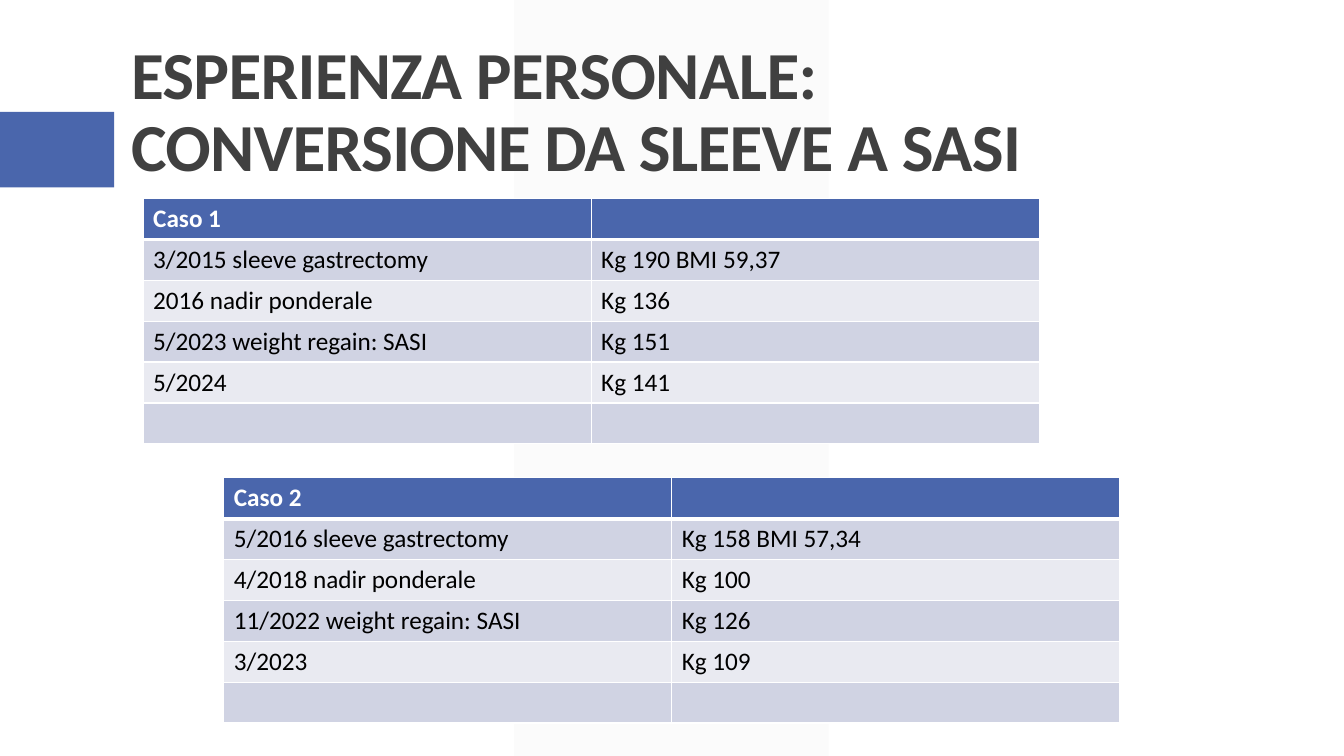
"""Builds the slide on sleeve-to-SASI conversion with its two case tables."""
from dataclasses import dataclass

from lxml import etree
from pptx import Presentation
from pptx import util as u
from pptx.dml.color import RGBColor
from pptx.enum import shapes, text
from pptx.oxml import ns

SLIDE_WIDTH, SLIDE_HEIGHT = u.Inches(13.333), u.Inches(7.5)
GRID = 100
FONT = "Calibri"
BLUE, WHITE, BLACK, GREY = "4A66AC", "FFFFFF", "000000", "404040"
BANDS = ("D0D3E3", "E9EAF1")


@dataclass(frozen=True)
class Area:
    """A rectangle in hundredths of the slide's width and height."""
    column: float
    row: float
    columns: float
    rows: float

    def box(self) -> tuple[int, int, int, int]:
        """Return left, top, width and height in EMU."""
        across, down = SLIDE_WIDTH / GRID, SLIDE_HEIGHT / GRID
        return (round(self.column * across), round(self.row * down),
                round(self.columns * across), round(self.rows * down))


@dataclass(frozen=True)
class Decoration:
    """A plain filled shape behind the content."""
    kind: shapes.MSO_SHAPE
    area: Area
    fill: str
    opacity: int = 100


@dataclass(frozen=True)
class Case:
    """A patient's history: a heading and its dated weights."""
    heading: str
    area: Area
    history: tuple[tuple[str, str], ...]


TITLE = "ESPERIENZA PERSONALE: CONVERSIONE DA SLEEVE A SASI"
TITLE_AREA = Area(9, 4.13, 82.5, 21.2)
DECORATIONS = (
    Decoration(shapes.MSO_SHAPE.PARALLELOGRAM, Area(38.25, 0, 23.4, 100), "F2F2F2", 30),
    Decoration(shapes.MSO_SHAPE.RECTANGLE, Area(0, 14.8, 8.5, 10), BLUE),
)
CASES = (
    Case("Caso 1", Area(10.65, 26.27, 66.67, 32.4), (
        ("3/2015 sleeve gastrectomy", "Kg 190 BMI 59,37"),
        ("2016 nadir ponderale", "Kg 136"),
        ("5/2023 weight regain: SASI", "Kg 151"),
        ("5/2024", "Kg 141"),
        ("", ""))),
    Case("Caso 2", Area(16.65, 63.2, 66.67, 32.4), (
        ("5/2016 sleeve gastrectomy", "Kg 158 BMI 57,34"),
        ("4/2018 nadir ponderale", "Kg 100"),
        ("11/2022 weight regain: SASI", "Kg 126"),
        ("3/2023", "Kg 109"),
        ("", ""))),
)


def paint(fill, color: str) -> None:
    """Give a fill one solid colour."""
    fill.solid()
    fill.fore_color.rgb = RGBColor.from_string(color)


def style(paragraph, size: float, color: str, bold: bool) -> None:
    """Format every run of a paragraph."""
    for run in paragraph.runs:
        run.font.name, run.font.size, run.font.bold = FONT, u.Pt(size), bold
        paint(run.font.fill, color)


def draw_decoration(slide, decoration: Decoration) -> None:
    """Draw a filled shape without outline or shadow."""
    shape = slide.shapes.add_shape(decoration.kind, *decoration.area.box())
    shape.shadow.inherit = False
    shape.line.fill.background()
    paint(shape.fill, decoration.fill)
    if decoration.kind == shapes.MSO_SHAPE.PARALLELOGRAM:
        shape.adjustments[0] = 0
    if decoration.opacity < 100:
        color = shape.element.spPr.find(".//" + ns.qn("a:srgbClr"))
        etree.SubElement(color, ns.qn("a:alpha"), val=str(decoration.opacity * 1000))


def draw_title(slide) -> None:
    """Fill the title placeholder and bring it in front of the decorations."""
    title = slide.shapes.title
    title.left, title.top, title.width, title.height = TITLE_AREA.box()
    frame = title.text_frame
    frame.text = TITLE
    frame.word_wrap = True
    frame.auto_size = text.MSO_AUTO_SIZE.NONE
    frame.vertical_anchor = text.MSO_ANCHOR.BOTTOM
    heading = frame.paragraphs[0]
    heading.alignment = text.PP_ALIGN.LEFT
    heading.line_spacing = 0.9
    style(heading, 48, GREY, True)
    heading.runs[0].font._element.set("spc", "-50")
    title.element.getparent().append(title.element)


def add_borders(cell, top: float, bottom: float) -> None:
    """Draw white lines on the four sides of a cell."""
    properties = cell._tc.get_or_add_tcPr()
    for side, points in (("L", 1), ("R", 1), ("T", top), ("B", bottom)):
        line = etree.SubElement(properties, ns.qn(f"a:ln{side}"), w=str(u.Pt(points)))
        solid = etree.SubElement(line, ns.qn("a:solidFill"))
        etree.SubElement(solid, ns.qn("a:srgbClr"), val=WHITE)


def draw_case(slide, case: Case) -> None:
    """Draw one case as a table with a blue heading and banded rows."""
    entries = ((case.heading, ""), *case.history)
    table = slide.shapes.add_table(len(entries), 2, *case.area.box()).table
    for row, entry in enumerate(entries):
        is_heading = row == 0
        for column, words in enumerate(entry):
            cell = table.cell(row, column)
            cell.text_frame.text = words
            style(cell.text_frame.paragraphs[0], 18, WHITE if is_heading else BLACK, is_heading)
            add_borders(cell, 3 if row == 1 else 1, 3 if is_heading else 1)
            paint(cell.fill, BLUE if is_heading else BANDS[(row - 1) % 2])


def main() -> None:
    """Build the slide and save it."""
    deck = Presentation()
    deck.slide_width, deck.slide_height = SLIDE_WIDTH, SLIDE_HEIGHT
    slide = deck.slides.add_slide(deck.slide_layouts.get_by_name("Title Only"))
    paint(slide.background.fill, WHITE)
    for decoration in DECORATIONS:
        draw_decoration(slide, decoration)
    draw_title(slide)
    for case in CASES:
        draw_case(slide, case)
    deck.save("out.pptx")


if __name__ == "__main__":
    main()
